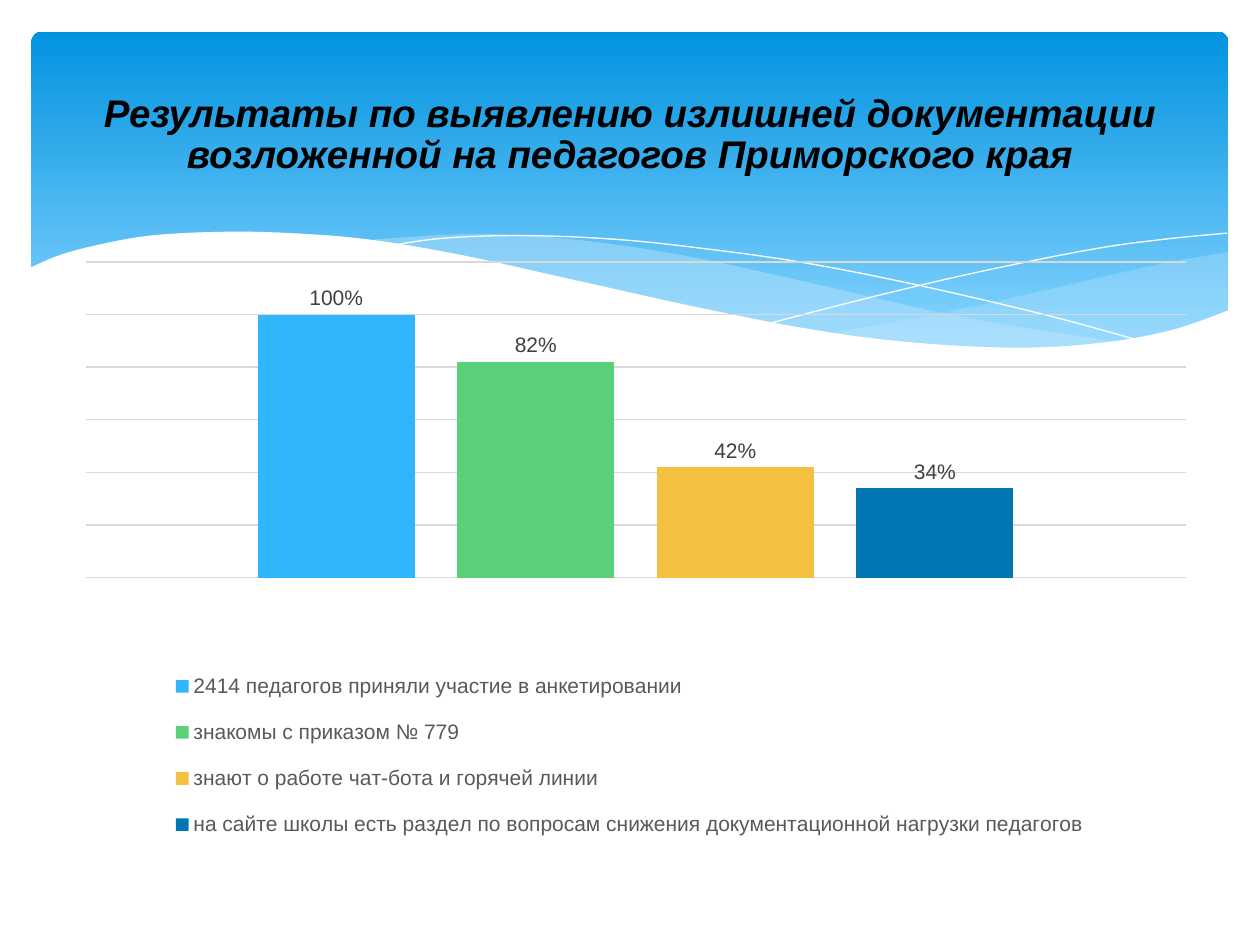
"""Build the slide on surplus paperwork of teachers in Primorsky Krai."""
from dataclasses import dataclass
from typing import Optional

from lxml import etree
from pptx import Presentation
from pptx.chart.data import CategoryChartData
from pptx.dml.color import RGBColor
from pptx.enum.chart import XL_CHART_TYPE, XL_LABEL_POSITION, XL_LEGEND_POSITION
from pptx.enum.shapes import MSO_SHAPE
from pptx.enum.text import MSO_ANCHOR, PP_ALIGN
from pptx.oxml import parse_xml
from pptx.oxml.ns import nsdecls, qn
from pptx.util import Inches, Pt

COLUMNS = XL_CHART_TYPE.COLUMN_CLUSTERED
OUTSIDE_END = XL_LABEL_POSITION.OUTSIDE_END
BOTTOM = XL_LEGEND_POSITION.BOTTOM
ROUNDED = MSO_SHAPE.ROUNDED_RECTANGLE
MIDDLE = MSO_ANCHOR.MIDDLE
CENTER = PP_ALIGN.CENTER
FONT = "Arial"
STEPS = 6

Points = list[tuple[float, float]]


@dataclass
class Wave:
    """A band between smooth edges, or a smooth line when it has no fill."""
    edges: list[Points]
    fill: Optional[str] = None
    opacity: int = 100


@dataclass
class Answer:
    """One survey result with its share of teachers."""
    name: str
    share: float
    color: str


WAVES = [
    Wave([[(9.75, 2), (9.34, 2.07), (8.91, 2.16), (8.05, 2.36), (7.29, 2.52), (6.61, 2.64)],
          [(6.61, 2.64), (7.05, 2.7), (7.57, 2.75), (8.13, 2.77), (8.71, 2.73),
           (9.28, 2.63), (9.75, 2.47)]], "C6E7FC", 29),
    Wave([[(8.92, 2.72), (8.06, 2.59), (7.41, 2.47), (6.28, 2.21), (5.54, 2.05),
           (4.88, 1.94), (4.2, 1.87), (3.61, 1.86), (2.86, 1.91)],
          [(2.86, 1.91), (3.62, 2.02), (4.49, 2.21), (5.66, 2.48), (6.5, 2.63),
           (7.22, 2.73), (7.95, 2.78), (8.47, 2.77), (8.92, 2.72)]], "C6E7FC", 40),
    Wave([[(3.09, 1.95), (3.53, 1.89), (4.16, 1.87), (4.89, 1.9), (5.56, 1.97),
           (6.35, 2.08), (7.27, 2.26), (8.3, 2.5), (9.07, 2.71)]]),
    Wave([[(6.13, 2.56), (6.95, 2.35), (7.76, 2.16), (8.66, 1.98), (9.23, 1.9), (9.74, 1.85)]]),
    Wave([[(9.76, 2.46), (9.3, 2.62), (8.75, 2.72), (8.08, 2.76), (7.26, 2.72),
           (6.47, 2.62), (5.54, 2.44), (4.46, 2.2), (3.64, 2.02), (2.92, 1.9),
           (2.3, 1.85), (1.76, 1.84), (1.19, 1.87), (0.75, 1.95), (0.46, 2.03), (0.23, 2.13)],
          [(0.23, 3.28), (9.76, 3.28)]], "FFFFFF"),
]

ANSWERS = [
    Answer("2414 педагогов приняли участие в анкетировании", 1, "31B6FD"),
    Answer("знакомы с приказом № 779", 0.82, "5BD078"),
    Answer("знают о работе чат-бота и горячей линии", 0.42, "F5C040"),
    Answer("на сайте школы есть раздел по вопросам снижения документационной "
           "нагрузки педагогов", 0.34, "0276B3"),
]


def rgb(color: str) -> RGBColor:
    """Turn a hex string into a colour."""
    return RGBColor.from_string(color)


def smooth(knots: Points) -> Points:
    """Run a Catmull-Rom curve through the knots."""
    if len(knots) < 3:
        return knots
    padded = [knots[0], *knots, knots[-1]]
    curve = [knots[0]]
    for a, b, c, d in zip(padded, padded[1:], padded[2:], padded[3:]):
        for step in range(1, STEPS + 1):
            t = step / STEPS
            curve.append(tuple(
                q + (r - p) * t / 2 + (2 * p - 5 * q + 4 * r - s) * t * t / 2
                + (3 * q - p - 3 * r + s) * t ** 3 / 2
                for p, q, r, s in zip(a, b, c, d)))
    return curve


def draw_wave(slide, wave: Wave) -> None:
    """Draw one wave of the header."""
    outline = [(Inches(x), Inches(y)) for edge in wave.edges for x, y in smooth(edge)]
    builder = slide.shapes.build_freeform(*outline[0])
    builder.add_line_segments(outline[1:], close=wave.fill is not None)
    band = builder.convert_to_shape()
    band.shadow.inherit = False
    if wave.fill is None:
        band.fill.background()
        band.line.color.rgb = rgb("FFFFFF")
        band.line.width = Pt(0)
        return
    band.line.fill.background()
    band.fill.solid()
    band.fill.fore_color.rgb = rgb(wave.fill)
    if wave.opacity < 100:
        tint = band.fill._xPr.find(qn("a:solidFill"))[0]
        etree.SubElement(tint, qn("a:alpha")).set("val", str(wave.opacity * 1000))


def draw_header(slide) -> None:
    """Draw the blue card and the waves over it."""
    card = slide.shapes.add_shape(ROUNDED, Inches(0.25), Inches(0.25), Inches(9.5), Inches(2.69))
    card.adjustments[0] = 0.034
    card.shadow.inherit = False
    card.line.fill.background()
    card.fill.gradient()
    card.fill.gradient_angle = 90
    for stop, (position, color) in zip(card.fill.gradient_stops,
                                       [(0.1, "83D3FE"), (1, "0293E0")]):
        stop.position = position
        stop.color.rgb = rgb(color)
    for wave in WAVES:
        draw_wave(slide, wave)


def write_title(slide) -> None:
    """Fill the title placeholder and lift it above the header."""
    title = slide.shapes.title
    title.left, title.top = Inches(0.5), Inches(0.49)
    title.width, title.height = Inches(9), Inches(1.17)
    frame = title.text_frame
    frame.margin_left = frame.margin_top = frame.margin_right = frame.margin_bottom = 0
    frame.vertical_anchor = MIDDLE
    frame.word_wrap = True
    frame.text = "Результаты по выявлению излишней документации возложенной на педагогов Приморского края"
    heading = frame.paragraphs[0]
    heading.alignment = CENTER
    heading.line_spacing = 0.9
    style_font(heading.font, 22, "000000")
    heading.font.bold = heading.font.italic = True
    slide.shapes._spTree.append(title._element)


def style_font(font, size: float, color: str) -> None:
    """Set typeface, size and colour."""
    font.name = FONT
    font.size = Pt(size)
    font.color.rgb = rgb(color)


def layout_xml(x: float, y: float, w: float, h: float, inner: bool = False):
    """Make a manual layout in fractions of the chart area."""
    target = '<c:layoutTarget val="inner"/>' if inner else ""
    return parse_xml(
        f'<c:layout {nsdecls("c")}><c:manualLayout>{target}'
        '<c:xMode val="edge"/><c:yMode val="edge"/>'
        f'<c:x val="{x}"/><c:y val="{y}"/><c:w val="{w}"/><c:h val="{h}"/>'
        '</c:manualLayout></c:layout>')


def place(element, layout, index: int) -> None:
    """Replace the layout of a chart part."""
    for old in element.findall(qn("c:layout")):
        element.remove(old)
    element.insert(index, layout)


def draw_chart(slide) -> None:
    """Chart the share of teachers for each answer."""
    data = CategoryChartData(number_format="0%")
    data.categories = ["1"]
    for answer in ANSWERS:
        data.add_series(answer.name, [answer.share])
    chart = slide.shapes.add_chart(
        COLUMNS, Inches(0.5), Inches(1.76), Inches(9), Inches(5.33), data).chart
    chart.has_title = False
    style_font(chart.font, 10, "000000")
    chart.category_axis.visible = False
    scale = chart.value_axis
    scale.visible = False
    scale.minimum_scale, scale.maximum_scale, scale.major_unit = 0, 1.2, 0.2
    scale.has_major_gridlines = True
    scale.major_gridlines.format.line.color.rgb = rgb("D9D9D9")
    scale.major_gridlines.format.line.width = Pt(0.75)
    plot = chart.plots[0]
    plot.gap_width, plot.overlap, plot.vary_by_categories = 219, -27, False
    for series, answer in zip(plot.series, ANSWERS):
        series.format.fill.solid()
        series.format.fill.fore_color.rgb = rgb(answer.color)
        labels = series.data_labels
        labels.show_value = True
        labels.position = OUTSIDE_END
        labels.number_format, labels.number_format_is_linked = "0%", False
        style_font(labels.font, 12, "404040")
    chart.has_legend = True
    legend = chart.legend
    legend.position = BOTTOM
    legend.include_in_layout = False
    style_font(legend.font, 12, "595959")
    place(legend._element, layout_xml(0.08, 0.64, 0.84, 0.31), 1)
    place(chart._chartSpace.chart.plotArea, layout_xml(0.02, 0.06, 0.97, 0.47, True), 0)


def main() -> None:
    """Build and save the slide."""
    deck = Presentation()
    deck.slide_width, deck.slide_height = Inches(10), Inches(7.5)
    slide = deck.slides.add_slide(deck.slide_layouts[5])
    draw_header(slide)
    write_title(slide)
    draw_chart(slide)
    deck.save("out.pptx")


if __name__ == "__main__":
    main()
